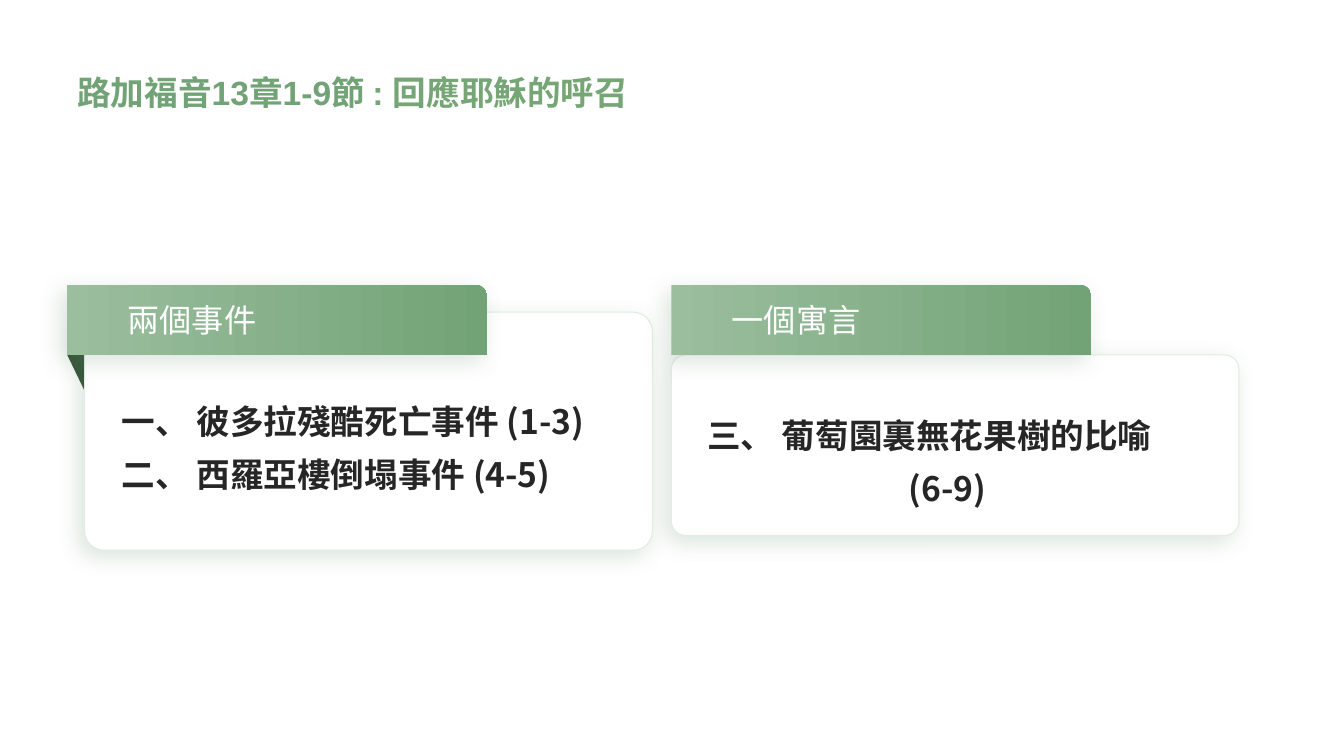
from lxml.etree import SubElement
from pptx import Presentation
from pptx.dml.color import RGBColor
from pptx.enum.shapes import MSO_SHAPE
from pptx.enum.text import MSO_ANCHOR, MSO_AUTO_SIZE, PP_ALIGN
from pptx.oxml.ns import qn
from pptx.util import Pt

CJK = "Noto Sans CJK SC"


def write(para, text, size, font, color, bold, indent=0):
    """Add one run; indent is the left margin in points."""
    para.alignment = PP_ALIGN.LEFT
    para._p.get_or_add_pPr().set("marL", str(Pt(indent)))
    run = para.add_run()
    run.text = text
    run.font.size = Pt(size)
    run.font.name = font
    run.font.bold = bold
    run.font.color.rgb = RGBColor.from_string(color)
    SubElement(run._r.get_or_add_rPr(), qn("a:ea"), typeface=CJK)


def panel(kind, left, top, width, height, round_by):
    """Add a rounded shape with a soft green shadow and middle text."""
    shape = slide.shapes.add_shape(kind, Pt(left), Pt(top), Pt(width), Pt(height))
    shape.adjustments[0] = round_by
    shape.shadow.inherit = False
    effects = shape._element.spPr.find(qn("a:effectLst"))
    shadow = SubElement(effects, qn("a:outerShdw"), blurRad=str(Pt(16)), dist=str(Pt(6)),
                        dir=str(135 * 60000), algn="tr", rotWithShape="0")
    tint = SubElement(shadow, qn("a:srgbClr"), val="527D55")
    SubElement(tint, qn("a:alpha"), val="20000")
    shape.text_frame.word_wrap = True
    shape.text_frame.vertical_anchor = MSO_ANCHOR.MIDDLE
    return shape


deck = Presentation()
deck.slide_width, deck.slide_height = Pt(960), Pt(540)
slide = deck.slides.add_slide(deck.slide_layouts[5])

# Title
title = slide.shapes.title
title.left, title.top, title.width, title.height = Pt(48), Pt(48), Pt(864), Pt(55.5)
frame = title.text_frame
frame.word_wrap = True
frame.auto_size = MSO_AUTO_SIZE.NONE
frame.vertical_anchor = MSO_ANCHOR.TOP
frame.margin_bottom = 0
write(frame.paragraphs[0], "路加福音13章1-9節", 24, "Arial", "72A376", True)
write(frame.paragraphs[0], " : 回應耶穌的呼召", 24, "Arial", "76A676", True)

# Ribbon fold behind the left card
fold = slide.shapes.add_shape(MSO_SHAPE.RIGHT_TRIANGLE, Pt(48), Pt(253.5), Pt(15), Pt(31))
fold.rotation = 180
fold.shadow.inherit = False
fold.fill.solid()
fold.fill.fore_color.rgb = RGBColor.from_string("365339")
fold.line.fill.background()

# Cards: left, top, height, lines with their indents
cards = [
    (479.5, 253.5, 129, [("三、 葡萄園裏無花果樹的比喻", 0), ("(6-9)", 144)]),
    (60.5, 223, 170, [("一、 彼多拉殘酷死亡事件 (1-3)", 0),
                      ("二、 西羅亞樓倒塌事件 (4-5)", 0)]),
]
for left, top, height, lines in cards:
    card = panel(MSO_SHAPE.ROUNDED_RECTANGLE, left, top, 405.5, height, 0.08)
    card.fill.solid()
    card.fill.fore_color.rgb = RGBColor.from_string("FFFFFF")
    card.line.color.rgb = RGBColor.from_string("E1ECE2")
    card.line.width = Pt(0.75)
    frame = card.text_frame
    frame.margin_left = frame.margin_right = Pt(22.5)
    frame.margin_top, frame.margin_bottom = Pt(14.5), 0
    for i, (text, indent) in enumerate(lines):
        para = frame.add_paragraph() if i else frame.paragraphs[0]
        para.line_spacing = 1.3
        write(para, text, 24, CJK, "262626", True, indent)

# Ribbons on top of the cards
for left, text in [(48, "兩個事件"), (479.5, "一個寓言")]:
    ribbon = panel(MSO_SHAPE.ROUND_1_RECTANGLE, left, 203.5, 300, 50, 0.17)
    ribbon.fill.gradient()
    ribbon.fill.gradient_angle = 0
    for stop, color in zip(ribbon.fill.gradient_stops, ["9BBE9E", "72A376"]):
        stop.color.rgb = RGBColor.from_string(color)
    ribbon.line.fill.background()
    write(ribbon.text_frame.paragraphs[0], text, 23, "Arial", "FFFFFF", False, 36)

deck.save("out.pptx")
